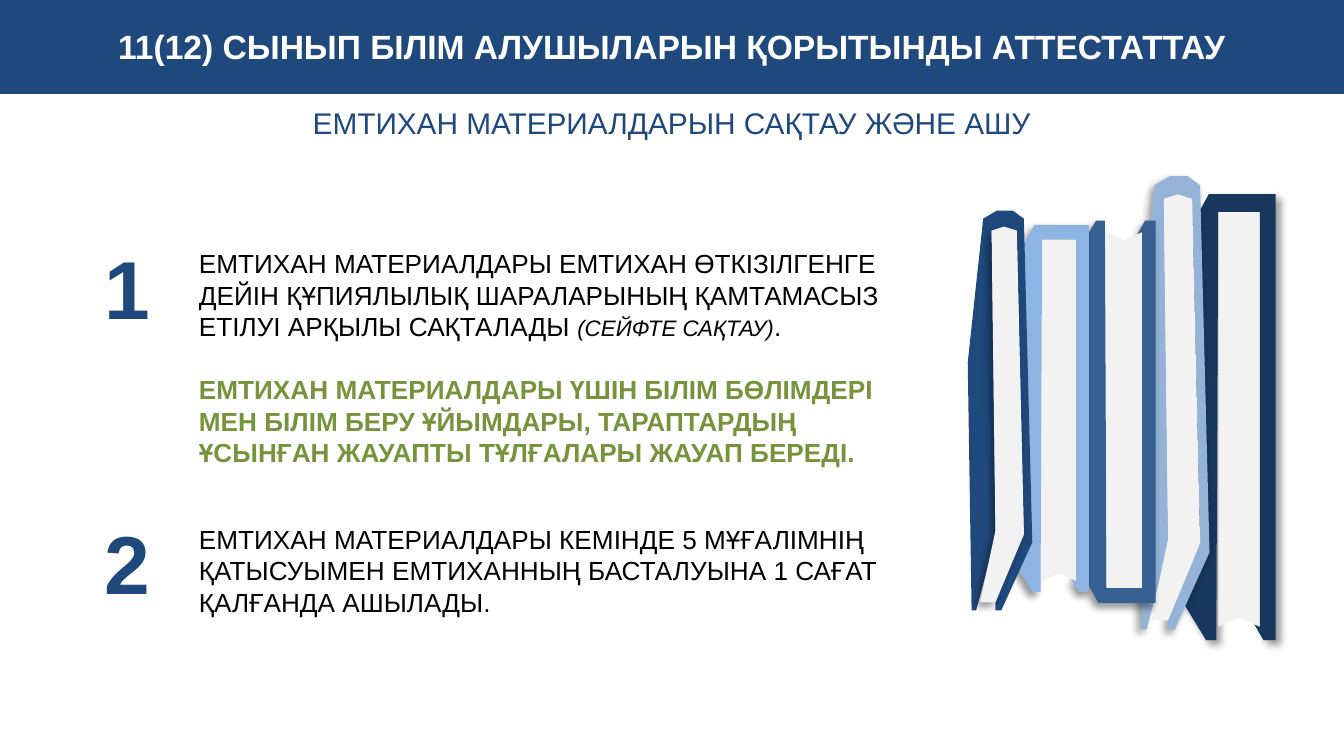
import dataclasses

import lxml.etree
import pptx
import pptx.dml.color
import pptx.enum.text
import pptx.oxml.ns
import pptx.util

Cm, Pt = pptx.util.Cm, pptx.util.Pt
RGBColor = pptx.dml.color.RGBColor
ALIGN, ANCHOR = pptx.enum.text.PP_ALIGN, pptx.enum.text.MSO_ANCHOR
qn = pptx.oxml.ns.qn

NAVY = RGBColor(0x1F, 0x49, 0x7D)
DEEP_NAVY = RGBColor(0x17, 0x37, 0x5E)
STEEL = RGBColor(0x37, 0x60, 0x92)
SKY = RGBColor(0x8E, 0xB4, 0xE3)
MIST = RGBColor(0x95, 0xB3, 0xD7)
PAPER = RGBColor(0xF2, 0xF2, 0xF2)
GREEN = RGBColor(0x77, 0x93, 0x3C)
BLACK = RGBColor(0, 0, 0)
WHITE = RGBColor(0xFF, 0xFF, 0xFF)

# Two book models, cover and pages, in percent of the book's own box
UPRIGHT = (
    [(0, 91), (26, 100), (37, 100), (39, 4), (83, 4), (83, 97), (76, 96), (87, 100),
     (100, 100), (100, 0), (29, 0), (0, 11)],
    [(39, 97), (39, 4), (83, 4), (83, 97), (61, 95)],
)
LEANING = (
    [(43, 97), (43, 100), (52, 100), (100, 83), (87, 2), (70, 0), (45, 0), (24, 2),
     (0, 38), (6, 100), (13, 100), (43, 82), (37, 5), (56, 4), (76, 5), (87, 81)],
    [(19, 98), (43, 98), (87, 81), (76, 5), (56, 4), (37, 5), (43, 80)],
)


@dataclasses.dataclass
class Box:
    left: int
    top: int
    width: int
    height: int


def place(shape, box):
    shape.left, shape.top, shape.width, shape.height = box.left, box.top, box.width, box.height


def prepare_frame(shape, anchor):
    frame = shape.text_frame
    frame.word_wrap = True
    frame.auto_size = pptx.enum.text.MSO_AUTO_SIZE.NONE
    frame.vertical_anchor = anchor
    frame.margin_left = frame.margin_right = Cm(0.25)
    frame.margin_top = frame.margin_bottom = Cm(0.13)
    return frame


def add_span(para, text, size, color, bold=False, italic=False):
    span = para.add_run()
    span.text = text
    font = span.font
    font.name, font.size, font.bold, font.italic = "Arial", Pt(size), bold, italic
    font.color.rgb = color


def add_label(page, box, text, size, bold, anchor):
    """Centred text box with one line."""
    label = page.shapes.add_textbox(box.left, box.top, box.width, box.height)
    para = prepare_frame(label, anchor).paragraphs[0]
    para.alignment = ALIGN.CENTER
    add_span(para, text, size, NAVY, bold)


def fill_header(page, box, title, subtitle):
    # Title band
    band = page.shapes.title
    place(band, box)
    band.fill.solid()
    band.fill.fore_color.rgb = NAVY
    band.line.color.rgb = NAVY
    band.line.width = Pt(2)
    para = prepare_frame(band, ANCHOR.MIDDLE).paragraphs[0]
    para.alignment = ALIGN.CENTER
    add_span(para, title, 18, WHITE, bold=True)
    # Subtitle under the band
    below = Box(box.left + Cm(0.7), box.top + box.height + Cm(0.1), box.width - Cm(1.4), Cm(0.9))
    add_label(page, below, subtitle, 16, False, ANCHOR.TOP)


def fill_step(page, body, box, number, paragraphs):
    """Large number on the left, its statements in a body placeholder."""
    add_label(page, Box(box.left, box.top, Cm(2.6), Cm(2.13)), number, 44, True, ANCHOR.MIDDLE)
    indent, drop = Cm(2.41), Cm(0.2)
    place(body, Box(box.left + indent, box.top + drop, box.width - indent, box.height - drop))
    frame = prepare_frame(body, ANCHOR.TOP)
    for index, spans in enumerate(paragraphs):
        para = frame.paragraphs[0] if index == 0 else frame.add_paragraph()
        para.space_before = Pt(17 if index else 0)
        properties = para._p.get_or_add_pPr()
        properties.set("marL", "0")
        properties.set("indent", "0")
        lxml.etree.SubElement(properties, qn("a:buNone"))
        for span in spans:
            add_span(para, *span)


def add_shadow(shape, angle):
    effects = shape._element.spPr.find(qn("a:effectLst"))
    shadow = lxml.etree.SubElement(effects, qn("a:outerShdw"), blurRad=str(Pt(4)),
                                   dist=str(Pt(3)), dir=str(angle * 60000), rotWithShape="0")
    color = lxml.etree.SubElement(shadow, qn("a:srgbClr"), val="000000")
    lxml.etree.SubElement(color, qn("a:alpha"), val="40000")


def draw_book(page, box, model, color, cover_angle=None, pages_angle=None, flipped=False):
    cover, pages = model
    for outline, fill, angle in ((cover, color, cover_angle), (pages, PAPER, pages_angle)):
        points = [(box.left + box.width * x / 100,
                   box.top + box.height * (100 - y if flipped else y) / 100)
                  for x, y in outline]
        builder = page.shapes.build_freeform(*points[0])
        builder.add_line_segments(points[1:], close=True)
        shape = builder.convert_to_shape()
        shape.fill.solid()
        shape.fill.fore_color.rgb = fill
        shape.line.fill.background()
        shape.shadow.inherit = False
        if angle is not None:
            add_shadow(shape, angle)


def draw_shelf(page, box):
    """Five books, from the back (right) to the front (left)."""
    def spot(left, top, width, height):
        return Box(box.left + Cm(left), box.top + Cm(top), Cm(width), Cm(height))

    draw_book(page, spot(4.04, 0.34, 1.78, 8.42), UPRIGHT, DEEP_NAVY, cover_angle=45)
    draw_book(page, spot(3.2, 0, 1.37, 8.56), LEANING, MIST, cover_angle=135)
    draw_book(page, spot(2.03, 0.84, 1.52, 7.22), UPRIGHT, STEEL, cover_angle=135, flipped=True)
    draw_book(page, spot(0.84, 0.92, 1.45, 6.93), UPRIGHT, SKY, cover_angle=135)
    draw_book(page, spot(0, 0.65, 1.22, 7.55), LEANING, NAVY, pages_angle=135)


def main():
    deck = pptx.Presentation()
    deck.slide_width, deck.slide_height = Cm(25.4), Cm(14.28)
    page = deck.slides.add_slide(deck.slide_layouts[3])
    first_body, second_body = page.placeholders[1], page.placeholders[2]

    fill_header(page, Box(0, 0, deck.slide_width, Cm(1.75)),
                "11(12) СЫНЫП БІЛІМ АЛУШЫЛАРЫН ҚОРЫТЫНДЫ АТТЕСТАТТАУ",
                "ЕМТИХАН МАТЕРИАЛДАРЫН САҚТАУ ЖӘНЕ АШУ")
    draw_shelf(page, Box(Cm(18.29), Cm(3.33), Cm(5.82), Cm(8.76)))
    fill_step(page, first_body, Box(Cm(1.1), Cm(4.35), Cm(16), Cm(4.65)), "1", [
        [("ЕМТИХАН МАТЕРИАЛДАРЫ ЕМТИХАН ӨТКІЗІЛГЕНГЕ ДЕЙІН ҚҰПИЯЛЫЛЫҚ ШАРАЛАРЫНЫҢ "
          "ҚАМТАМАСЫЗ ЕТІЛУІ АРҚЫЛЫ САҚТАЛАДЫ ", 14, BLACK),
         ("(СЕЙФТЕ САҚТАУ)", 12, BLACK, False, True),
         (".", 14, BLACK)],
        [("ЕМТИХАН МАТЕРИАЛДАРЫ ҮШІН БІЛІМ БӨЛІМДЕРІ МЕН БІЛІМ БЕРУ ҰЙЫМДАРЫ, "
          "ТАРАПТАРДЫҢ ҰСЫНҒАН ЖАУАПТЫ ТҰЛҒАЛАРЫ ЖАУАП БЕРЕДІ.", 14, GREEN, True)],
    ])
    fill_step(page, second_body, Box(Cm(1.1), Cm(9.55), Cm(16.6), Cm(2.26)), "2", [
        [("ЕМТИХАН МАТЕРИАЛДАРЫ КЕМІНДЕ 5 МҰҒАЛІМНІҢ ҚАТЫСУЫМЕН ЕМТИХАННЫҢ "
          "БАСТАЛУЫНА 1 САҒАТ ҚАЛҒАНДА АШЫЛАДЫ.", 14, BLACK)],
    ])
    deck.save("out.pptx")


if __name__ == "__main__":
    main()
